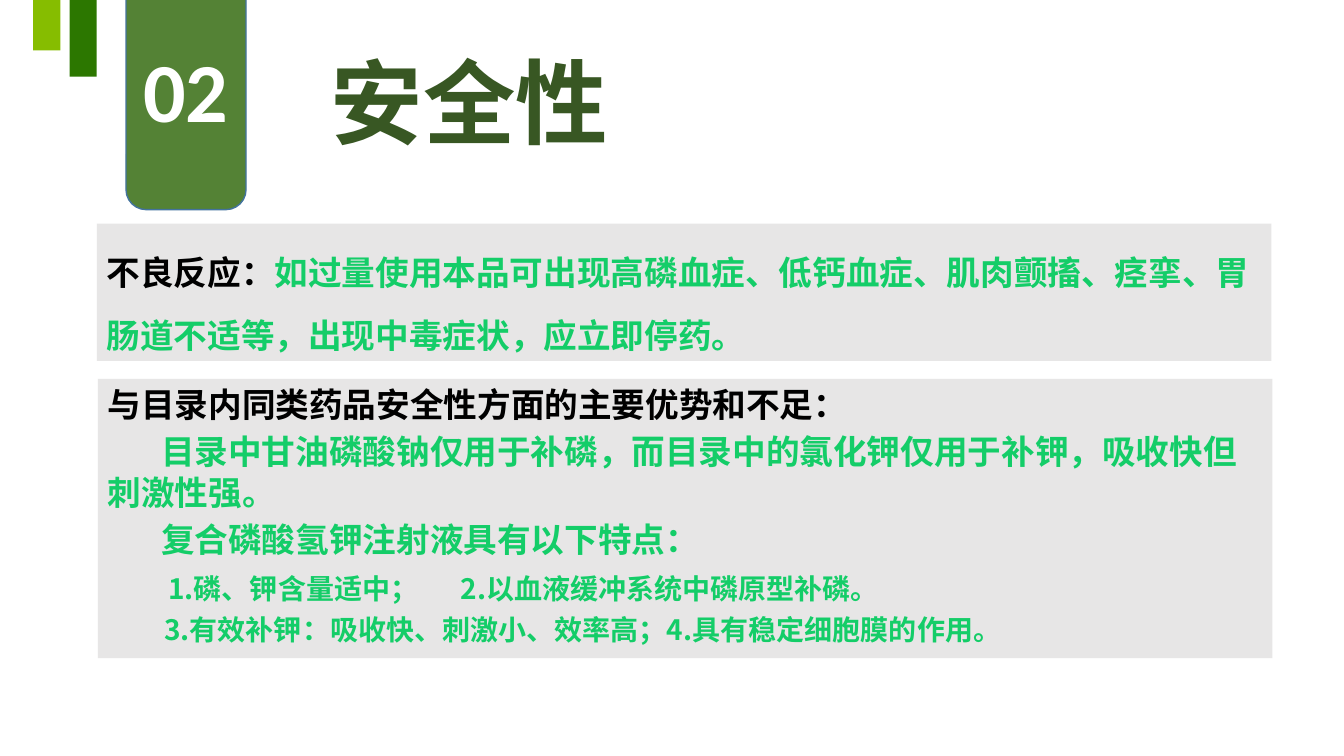
from dataclasses import dataclass

from lxml.etree import SubElement
from pptx import Presentation
from pptx.dml.color import RGBColor
from pptx.enum.shapes import MSO_SHAPE
from pptx.enum.text import MSO_ANCHOR, PP_ALIGN
from pptx.oxml.ns import qn
from pptx.util import Inches, Pt


@dataclass(frozen=True)
class Theme:
    latin: str = "Calibri"
    hans: str = "Noto Sans CJK SC"
    dark: str = "2C7700"
    lime: str = "86BD00"
    badge: str = "548235"
    edge: str = "43739E"
    title: str = "385723"
    panel: str = "E7E6E6"
    mint: str = "14CD68"
    black: str = "000000"
    white: str = "FFFFFF"
    head: int = 66
    number: int = 60
    body: int = 24
    item: int = 20


THEME = Theme()


def add_block(slide, kind, box, fill, edge=None):
    shape = slide.shapes.add_shape(kind, *map(Inches, box))
    shape.shadow.inherit = False
    shape.fill.solid()
    shape.fill.fore_color.rgb = RGBColor.from_string(fill)
    if edge:
        shape.line.color.rgb = RGBColor.from_string(edge)
        shape.line.width = Pt(1)
    else:
        shape.line.fill.background()
    return shape


def set_text(para, parts, size, font=THEME.hans, align=PP_ALIGN.LEFT):
    """Fill a paragraph with bold (text, colour) parts."""
    para.alignment = align
    para.font.size = Pt(size)
    para.font.bold = True
    para.font.name = font
    for text, color in parts:
        run = para.add_run()
        run.text = text
        run.font.color.rgb = RGBColor.from_string(color)
        run.font.name = font
        SubElement(run.font._element, qn("a:ea"), typeface=font)


def set_indent(para, first, tab=None):
    """Indent the first line and add an optional tab stop."""
    props = para._p.get_or_add_pPr()
    props.set("marL", "0")
    props.set("indent", str(Inches(first)))
    if tab:
        stops = SubElement(props, qn("a:tabLst"))
        SubElement(stops, qn("a:tab"), pos=str(Inches(tab)), algn="l")


def add_panel(slide, box):
    shape = add_block(slide, MSO_SHAPE.RECTANGLE, box, THEME.panel)
    frame = shape.text_frame
    frame.word_wrap = True
    frame.vertical_anchor = MSO_ANCHOR.TOP
    return frame


def add_header(slide):
    for left, tall, color in ((0.69, 0.76, THEME.dark), (0.33, 0.5, THEME.lime)):
        add_block(slide, MSO_SHAPE.RECTANGLE, (left, 0, 0.27, tall), color)

    badge = add_block(slide, MSO_SHAPE.FLOWCHART_ALTERNATE_PROCESS,
                      (1.25, -0.32, 1.19, 2.4), THEME.badge, THEME.edge)
    badge.text_frame.vertical_anchor = MSO_ANCHOR.MIDDLE
    set_text(badge.text_frame.paragraphs[0], [("02", THEME.white)],
             THEME.number, THEME.latin, PP_ALIGN.CENTER)

    title = slide.shapes.add_textbox(*map(Inches, (3.18, 0.4, 2.95, 1.21)))
    title.text_frame.word_wrap = False
    set_text(title.text_frame.paragraphs[0], [("安全性", THEME.title)],
             THEME.head, align=PP_ALIGN.CENTER)


def add_effects(slide):
    para = add_panel(slide, (0.96, 2.22, 11.65, 1.36)).paragraphs[0]
    para.line_spacing = Pt(45)
    set_text(para, [
        ("不良反应：", THEME.black),
        ("如过量使用本品可出现高磷血症、低钙血症、肌肉颤搐、痉挛、"
         "胃肠道不适等，出现中毒症状，应立即停药。", THEME.mint),
    ], THEME.body)


def add_merits(slide):
    frame = add_panel(slide, (0.97, 3.76, 11.65, 2.77))
    # text, colour, size, first-line indent, tab stop, space before
    rows = (
        ("与目录内同类药品安全性方面的主要优势和不足：",
         THEME.black, THEME.body, 0, None, 0),
        ("目录中甘油磷酸钠仅用于补磷，而目录中的氯化钾仅用于补钾，吸收快但刺激性强。",
         THEME.mint, THEME.body, 0.53, None, 5),
        ("复合磷酸氢钾注射液具有以下特点：",
         THEME.mint, THEME.body, 0.53, None, 5),
        ("1.磷、钾含量适中；\t2.以血液缓冲系统中磷原型补磷。",
         THEME.mint, THEME.item, 0.6, 5.1, 9),
        ("3.有效补钾：吸收快、刺激小、效率高；4.具有稳定细胞膜的作用。",
         THEME.mint, THEME.item, 0.56, None, 5),
    )
    for i, (text, color, size, first, tab, gap) in enumerate(rows):
        para = frame.add_paragraph() if i else frame.paragraphs[0]
        set_indent(para, first, tab)
        para.space_before = Pt(gap)
        set_text(para, [(text, color)], size)


def main():
    deck = Presentation()
    deck.slide_width = Inches(13.33)
    deck.slide_height = Inches(7.5)
    slide = deck.slides.add_slide(deck.slide_layouts[6])
    add_header(slide)
    add_effects(slide)
    add_merits(slide)
    deck.save("out.pptx")


if __name__ == "__main__":
    main()
